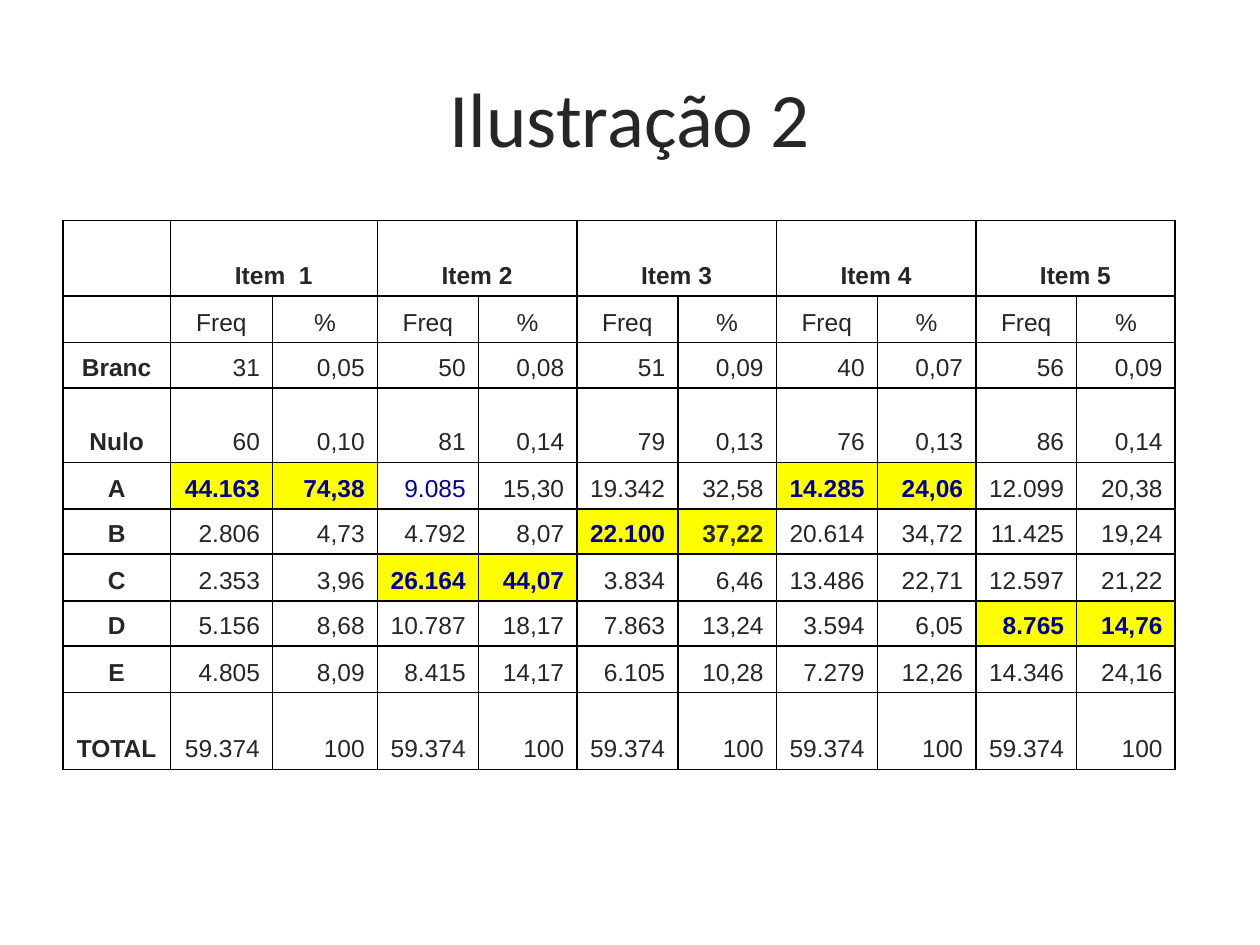
from dataclasses import dataclass

from pptx import Presentation
from pptx.dml.color import RGBColor
from pptx.enum.text import MSO_ANCHOR, PP_ALIGN
from pptx.oxml import parse_xml
from pptx.oxml.ns import nsdecls
from pptx.util import Inches, Pt


@dataclass(frozen=True)
class Theme:
    text: RGBColor = RGBColor.from_string("262626")
    answer: RGBColor = RGBColor.from_string("000099")
    highlight: RGBColor = RGBColor.from_string("FFFF00")
    border: str = "000000"
    border_width: int = Pt(1)
    title_font: str = "Calibri"
    title_size: int = Pt(44)
    table_font: str = "Arial"
    table_size: int = Pt(14)


THEME = Theme()

ITEMS = ["Item  1", "Item 2", "Item 3", "Item 4", "Item 5"]
RESPONSES = [
    ["Branc", "31", "0,05", "50", "0,08", "51", "0,09", "40", "0,07", "56", "0,09"],
    ["Nulo", "60", "0,10", "81", "0,14", "79", "0,13", "76", "0,13", "86", "0,14"],
    ["A", "44.163", "74,38", "9.085", "15,30", "19.342", "32,58",
     "14.285", "24,06", "12.099", "20,38"],
    ["B", "2.806", "4,73", "4.792", "8,07", "22.100", "37,22",
     "20.614", "34,72", "11.425", "19,24"],
    ["C", "2.353", "3,96", "26.164", "44,07", "3.834", "6,46",
     "13.486", "22,71", "12.597", "21,22"],
    ["D", "5.156", "8,68", "10.787", "18,17", "7.863", "13,24",
     "3.594", "6,05", "8.765", "14,76"],
    ["E", "4.805", "8,09", "8.415", "14,17", "6.105", "10,28",
     "7.279", "12,26", "14.346", "24,16"],
    ["TOTAL"] + ["59.374", "100"] * len(ITEMS),
]
ANSWER_KEY = ["A", "C", "B", "A", "D"]
BLUE_EXCEPTIONS = {"9.085": True, "37,22": False}

COLUMN_WIDTHS = [0.85, 0.81, 0.83] + [0.8, 0.78] * 4
ROW_HEIGHTS = [0.6, 0.37, 0.36, 0.59, 0.37, 0.36, 0.37, 0.36, 0.37, 0.61]


def add_borders(cell):
    properties = cell._tc.get_or_add_tcPr()
    for side in ("lnL", "lnR", "lnT", "lnB"):
        properties.append(parse_xml(
            f'<a:{side} {nsdecls("a")} w="{THEME.border_width}"><a:solidFill>'
            f'<a:srgbClr val="{THEME.border}"/></a:solidFill></a:{side}>'))


def format_cell(cell, text, alignment, bold=False, blue=False, highlighted=False):
    add_borders(cell)
    if highlighted:
        cell.fill.solid()
        cell.fill.fore_color.rgb = THEME.highlight
    else:
        cell.fill.background()
    cell.vertical_anchor = MSO_ANCHOR.BOTTOM
    cell.margin_top = 0
    cell.margin_left = Inches(0.05)
    cell.margin_right = Inches(0.1 if alignment == PP_ALIGN.RIGHT else 0.05)
    cell.text = text
    paragraph = cell.text_frame.paragraphs[0]
    paragraph.alignment = alignment
    font = paragraph.font
    font.name, font.size, font.bold = THEME.table_font, THEME.table_size, bold
    font.color.rgb = THEME.answer if blue else THEME.text


def fill_headings(table):
    names = [""] + [text for item in ITEMS for text in (item, "")]
    measures = [""] + ["Freq", "%"] * len(ITEMS)
    for row, headings in enumerate((names, measures)):
        for column, text in enumerate(headings):
            format_cell(table.cell(row, column), text, PP_ALIGN.CENTER, bold=row == 0)
    for column in range(1, len(names), 2):
        table.cell(0, column).merge(table.cell(0, column + 1))


def fill_responses(table):
    for row, (label, *values) in enumerate(RESPONSES, start=2):
        format_cell(table.cell(row, 0), label, PP_ALIGN.CENTER, bold=True)
        for index, value in enumerate(values):
            correct = ANSWER_KEY[index // 2] == label
            format_cell(table.cell(row, index + 1), value, PP_ALIGN.RIGHT,
                        bold=correct, blue=BLUE_EXCEPTIONS.get(value, correct),
                        highlighted=correct)


def add_response_table(slide, left, top, width, height):
    table = slide.shapes.add_table(
        len(ROW_HEIGHTS), len(COLUMN_WIDTHS), left, top, width, height).table
    table.first_row = table.horz_banding = False
    for column, share in zip(table.columns, COLUMN_WIDTHS):
        column.width = int(width * share / sum(COLUMN_WIDTHS))
    for row, share in zip(table.rows, ROW_HEIGHTS):
        row.height = int(height * share / sum(ROW_HEIGHTS))
    fill_headings(table)
    fill_responses(table)


def place_title(slide, text, left, top, width, height):
    title = slide.shapes.title
    title.left, title.top, title.width, title.height = left, top, width, height
    title.text_frame.text = text
    title.text_frame.vertical_anchor = MSO_ANCHOR.MIDDLE
    paragraph = title.text_frame.paragraphs[0]
    paragraph.alignment = PP_ALIGN.CENTER
    paragraph.font.name = THEME.title_font
    paragraph.font.size = THEME.title_size
    paragraph.font.color.rgb = THEME.text


def main():
    presentation = Presentation()
    presentation.slide_width, presentation.slide_height = Inches(10), Inches(7.5)
    title_only = presentation.slide_layouts.get_by_name("Title Only")
    slide = presentation.slides.add_slide(title_only)
    place_title(slide, "Ilustração 2", Inches(0.5), Inches(0.3), Inches(9), Inches(1.25))
    add_response_table(slide, Inches(0.5), Inches(1.75), Inches(8.83), Inches(4.36))
    presentation.save("out.pptx")


if __name__ == "__main__":
    main()
